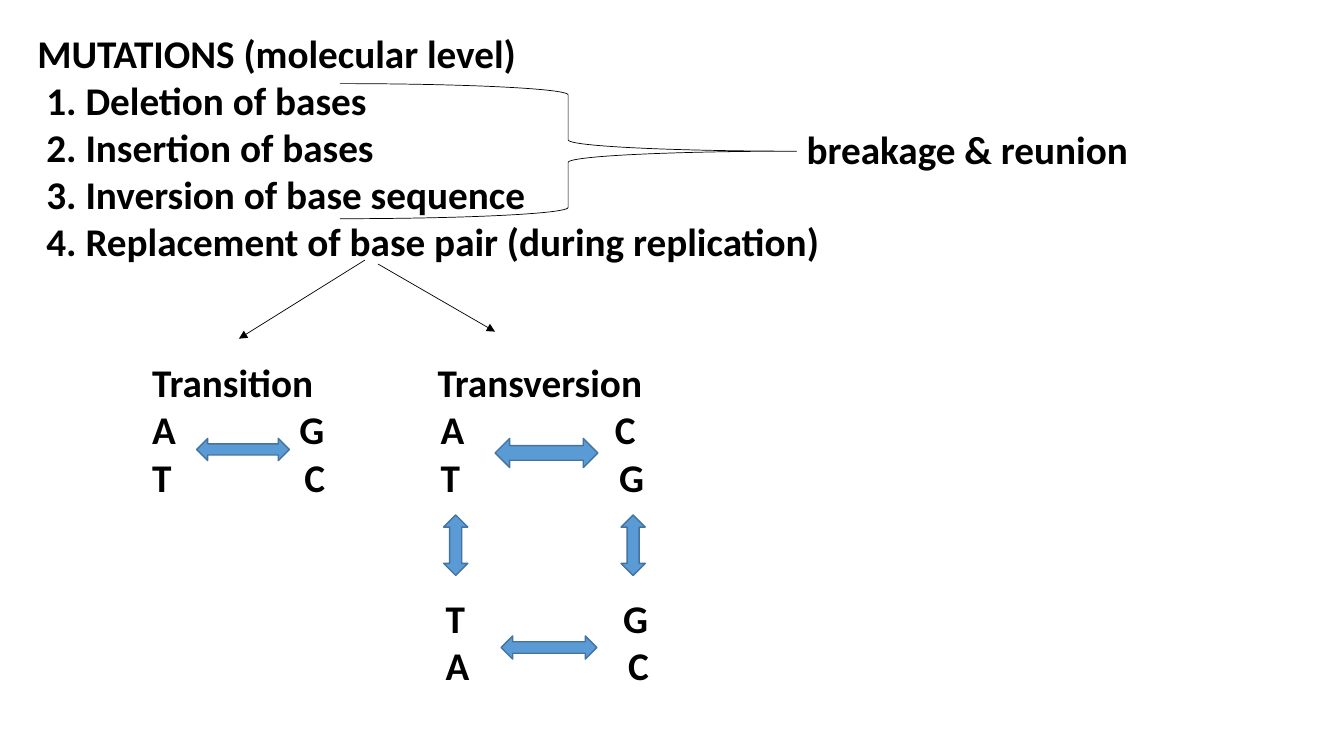
from collections import namedtuple

from lxml.etree import SubElement
from pptx import Presentation
from pptx.dml.color import RGBColor
from pptx.enum.shapes import MSO_CONNECTOR as Connector, MSO_SHAPE as Shape
from pptx.enum.text import MSO_ANCHOR as Anchor, MSO_AUTO_SIZE as AutoSize, PP_ALIGN as Align
from pptx.oxml.ns import qn
from pptx.util import Inches, Pt

Box = namedtuple("Box", "left top width height")
COLORS = {"text": "000000", "arrow": "5B9BD5", "arrow_edge": "43739E", "background": "FFFFFF"}
UNIT = 0.1
TEXT_ROW = 4.67
MUTATIONS = [
    "1. Deletion of bases",
    "2. Insertion of bases",
    "3. Inversion of base sequence",
    "4. Replacement of base pair (during replication)",
]
TRANSITION_BASES = [("A", 0, 1), ("T", 0, 2), ("G", 14.6, 1), ("C", 15.1, 2)]
TRANSITION_ARROWS = [(Shape.LEFT_RIGHT_ARROW, Box(4.4, 7.9, 9.2, 2.2))]
TRANSVERSION_BASES = [
    ("A", 0.3, 1), ("T", 0.3, 2), ("C", 17.6, 1), ("G", 18, 2),
    ("T", 0.8, 5), ("A", 0.8, 6), ("G", 18.4, 5), ("C", 18.9, 6),
]
TRANSVERSION_ARROWS = [
    (Shape.LEFT_RIGHT_ARROW, Box(5.7, 7.9, 10.2, 2.9)),
    (Shape.LEFT_RIGHT_ARROW, Box(6.3, 27.5, 9.5, 2.3)),
    (Shape.UP_DOWN_ARROW, Box(18.2, 15.5, 2.4, 6)),
    (Shape.UP_DOWN_ARROW, Box(0.6, 15.5, 2.4, 6)),
]


def color(name):
    """Return the named colour."""
    return RGBColor.from_string(COLORS[name])


def grid(value):
    """Convert grid units to a length."""
    return Inches(value * UNIT)


def inside(box, part):
    """Place a part relative to the corner of its box."""
    return Box(box.left + part.left, box.top + part.top, part.width, part.height)


def write(shape, box, lines):
    """Move a text shape to its box and write bold lines in it."""
    shape.left, shape.top, shape.width, shape.height = map(grid, box)
    frame = shape.text_frame
    frame.text = "\n".join(lines)
    frame.word_wrap = True
    frame.auto_size = AutoSize.NONE
    frame.vertical_anchor = Anchor.TOP
    frame.margin_left = frame.margin_right = frame.margin_top = frame.margin_bottom = 0
    for paragraph in frame.paragraphs:
        paragraph.alignment = Align.LEFT
        paragraph.space_before = paragraph.space_after = Pt(0)
        paragraph.line_spacing = Pt(TEXT_ROW * UNIT * 72)
        for run in paragraph.runs:
            run.font.name, run.font.size, run.font.bold = "Calibri", Pt(28), True
            run.font.color.rgb = color("text")


def add_label(slide, box, text):
    """Add one line of text."""
    write(slide.shapes.add_textbox(0, 0, 0, 0), box, [text])


def add_outline(slide, box):
    """Fill the title and the numbered list of mutations."""
    write(slide.shapes.title, box._replace(height=TEXT_ROW), ["MUTATIONS (molecular level)"])
    body = slide.placeholders[1]
    list_part = Box(0.9, TEXT_ROW, box.width - 0.9, box.height - TEXT_ROW)
    write(body, inside(box, list_part), MUTATIONS)
    for paragraph in body.text_frame.paragraphs:
        properties = paragraph._p.get_or_add_pPr()
        properties.set("marL", "0")
        properties.set("indent", "0")
        SubElement(properties, qn("a:buNone"))


def add_cause(slide, box):
    """Bracket the first three mutations and name their cause."""
    brace = slide.shapes.add_shape(Shape.RIGHT_BRACE, *map(grid, box))
    brace.shadow.inherit = False
    brace.fill.background()
    brace.line.color.rgb = color("text")
    brace.line.width = Pt(0.5)
    label = Box(box.width + 1, (box.height - TEXT_ROW) / 2 - 0.2, 40, TEXT_ROW)
    add_label(slide, inside(box, label), "breakage & reunion")


def add_branch(slide, start, end):
    """Draw a thin arrow from the list to a kind of replacement."""
    line = slide.shapes.add_connector(Connector.STRAIGHT, *map(grid, start + end))
    line.line.color.rgb = color("text")
    line.line.width = Pt(0.5)
    SubElement(line.line._get_or_add_ln(), qn("a:tailEnd"), type="triangle")
    SubElement(line._element.spPr, qn("a:effectLst"))


def add_replacement(slide, box, name, bases, arrows):
    """Show a kind of replacement with its bases and block arrows."""
    add_label(slide, box._replace(height=TEXT_ROW), name)
    for base, left, row in bases:
        add_label(slide, inside(box, Box(left, row * TEXT_ROW, 4, TEXT_ROW)), base)
    for kind, part in arrows:
        arrow = slide.shapes.add_shape(kind, *map(grid, inside(box, part)))
        arrow.shadow.inherit = False
        arrow.fill.solid()
        arrow.fill.fore_color.rgb = color("arrow")
        arrow.line.color.rgb = color("arrow_edge")
        arrow.line.width = Pt(1)


def main():
    """Build and save the slide."""
    presentation = Presentation()
    presentation.slide_width, presentation.slide_height = Inches(13.33), Inches(7.5)
    slide = presentation.slides.add_slide(presentation.slide_layouts[1])
    slide.background.fill.solid()
    slide.background.fill.fore_color.rgb = color("background")
    outline = Box(3.7, 2.9, 85, 5 * TEXT_ROW)
    kinds_top = outline.top + 7 * TEXT_ROW
    add_outline(slide, outline)
    add_cause(slide, Box(33.7, 8.3, 45.3, 13.4))
    add_branch(slide, (36.2, 25.8), (23.7, 33.6))
    add_branch(slide, (37.5, 26.2), (49.1, 32.9))
    add_replacement(slide, Box(15.1, kinds_top, 20, 3 * TEXT_ROW), "Transition",
                    TRANSITION_BASES, TRANSITION_ARROWS)
    add_replacement(slide, Box(43.4, kinds_top, 25, 7 * TEXT_ROW), "Transversion",
                    TRANSVERSION_BASES, TRANSVERSION_ARROWS)
    presentation.save("out.pptx")


if __name__ == "__main__":
    main()
